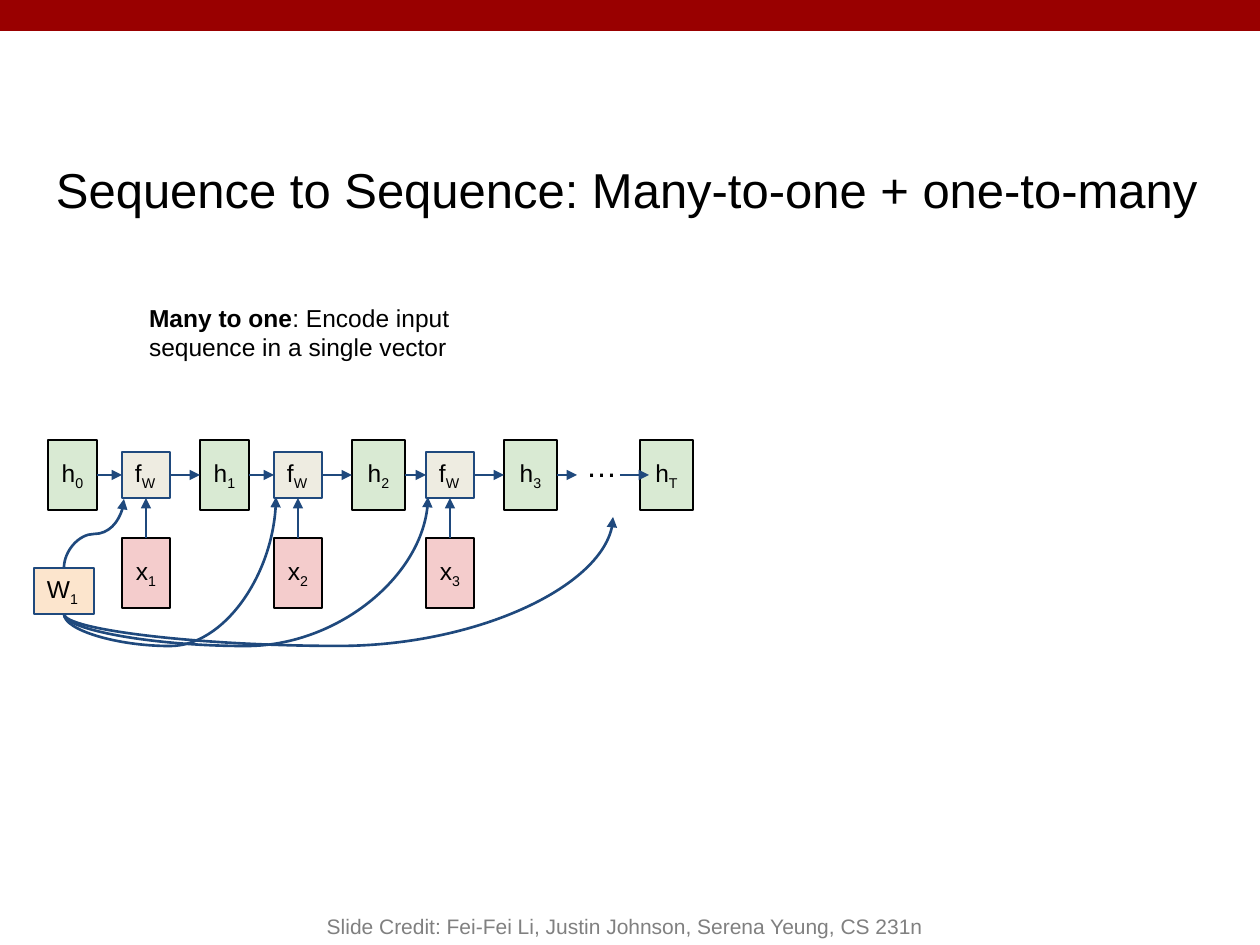
from lxml import etree
from pptx import Presentation, util as u
from pptx.dml.color import RGBColor
from pptx.enum import shapes, text
from pptx.oxml.ns import qn

SCALE = 914400 / 126
FONT = "Arial"
BLACK = RGBColor(0x00, 0x00, 0x00)
GRAY = RGBColor(0x80, 0x80, 0x80)
CRIMSON = RGBColor(0x99, 0x00, 0x00)
NAVY = RGBColor(0x1F, 0x49, 0x7D)
GREEN = RGBColor(0xD9, 0xEA, 0xD3)
BEIGE = RGBColor(0xEE, 0xEC, 0xE1)
PINK = RGBColor(0xF4, 0xCC, 0xCC)
PEACH = RGBColor(0xFC, 0xE5, 0xCD)

TOP, LEFT, BOTTOM, RIGHT = range(4)
STEP = 152
MID_Y = 475
CURVE_Y = 646


def px(value):
    return u.Emu(round(value * SCALE))


def set_frame(box, anchor, inset=13):
    frame = box.text_frame
    frame.word_wrap = True
    frame.vertical_anchor = anchor
    frame.margin_left = frame.margin_right = px(13)
    frame.margin_top = frame.margin_bottom = px(inset)
    return frame


def add_span(para, words, size, color=BLACK, bold=False):
    span = para.add_run()
    span.text = words
    span.font.name = FONT
    span.font.size = u.Pt(size)
    span.font.color.rgb = color
    span.font.bold = bold
    return span


def add_label(page, bounds, spans, size, color=BLACK, anchor=text.MSO_ANCHOR.TOP,
              align=text.PP_ALIGN.LEFT, inset=13):
    box = page.shapes.add_textbox(*map(px, bounds))
    para = set_frame(box, anchor, inset).paragraphs[0]
    para.alignment = align
    for words, bold in spans:
        add_span(para, words, size, color, bold)


def add_block(page, bounds, fill, line=None):
    block = page.shapes.add_shape(shapes.MSO_SHAPE.RECTANGLE, *map(px, bounds))
    block.shadow.inherit = False
    block.fill.solid()
    block.fill.fore_color.rgb = fill
    if line is None:
        block.line.fill.background()
    else:
        block.line.color.rgb = line
        block.line.width = u.Pt(0.75)
    return block


def add_node(page, bounds, fill, line, name, index, align=text.PP_ALIGN.CENTER):
    node = add_block(page, bounds, fill, line)
    para = set_frame(node, text.MSO_ANCHOR.MIDDLE).paragraphs[0]
    para.alignment = align
    add_span(para, name, 14)
    add_span(para, index, 14).font._element.set("baseline", "-25000")
    return node


def add_state(page, left, width, index):
    return add_node(page, (left, MID_Y - 35, width, 70), GREEN, BLACK, "h", index)


def style_arrow(arrow):
    arrow.line.color.rgb = NAVY
    arrow.line.width = u.Pt(1.5)
    etree.SubElement(arrow.line._get_or_add_ln(), qn("a:tailEnd"), type="triangle")
    etree.SubElement(arrow._element.spPr, qn("a:effectLst"))


def add_arrow(page, start, end):
    arrow = page.shapes.add_connector(
        shapes.MSO_CONNECTOR.STRAIGHT, *map(px, (*start, *end)))
    style_arrow(arrow)
    return arrow


def link(page, source, source_side, target, target_side):
    arrow = add_arrow(page, (0, 0), (0, 0))
    arrow.begin_connect(source, source_side)
    arrow.end_connect(target, target_side)


def add_curve(page, start, end, bend_y):
    (x0, y0), (x1, y1) = start, end
    center_x, center_y = (x0 + x1) / 2, (y0 + y1) / 2
    half_width, half_height = (y0 - y1) / 2, (x1 - x0) / 2
    curve = page.shapes.add_connector(
        shapes.MSO_CONNECTOR.CURVE,
        px(center_x + half_width), px(center_y + half_height),
        px(center_x - half_width), px(center_y - half_height))
    properties = curve._element.spPr
    properties.find(qn("a:xfrm")).set("rot", "5400000")
    adjustments = properties.find(qn("a:prstGeom")).get_or_add_avLst()
    bend = round((y0 - bend_y) / (y0 - y1) * 100000)
    etree.SubElement(adjustments, qn("a:gd"), name="adj1", fmla=f"val {bend}")
    style_arrow(curve)


def add_encoder(page):
    state = add_state(page, 48, 49, "0")
    for step, width in enumerate((49, 53, 53)):
        left = 122 + step * STEP
        index = str(step + 1)
        cell = add_node(page, (left, MID_Y - 23, 48, 46), BEIGE, NAVY, "f", "W",
                        text.PP_ALIGN.LEFT)
        value = add_node(page, (left, 538, 48, 70), PINK, BLACK, "x", index)
        following = add_state(page, left + 78, width, index)
        link(page, state, RIGHT, cell, LEFT)
        link(page, value, TOP, cell, BOTTOM)
        link(page, cell, RIGHT, following, LEFT)
        state = following
    add_arrow(page, (557, MID_Y), (577, MID_Y)).begin_connect(state, RIGHT)
    add_label(page, (573, 433, 78, 83), [("…", False)], 18)
    add_state(page, 640, 53, "T")
    add_arrow(page, (620, MID_Y), (649, MID_Y))


def add_weights(page):
    add_node(page, (34, 568, 60, 46), PEACH, NAVY, "W", "1", text.PP_ALIGN.LEFT)
    add_curve(page, (64, 568), (124, 499), 534)
    for end in ((276, 497), (428, 497), (613, 517)):
        add_curve(page, (64, 614), end, CURVE_Y)


def main():
    deck = Presentation()
    deck.slide_width, deck.slide_height = px(1260), px(945)
    page = deck.slides.add_slide(deck.slide_layouts[6])
    add_block(page, (0, 0, 1260, 31), CRIMSON)
    add_label(page, (43, 130, 1186, 118),
              [("Sequence to Sequence: Many-to-one + one-to-many", False)], 28,
              anchor=text.MSO_ANCHOR.MIDDLE)
    add_encoder(page)
    add_weights(page)
    add_label(page, (136, 290, 407, 91),
              [("Many to one", True),
               (": Encode input sequence in a single vector", False)], 14)
    add_label(page, (252, 882, 746, 63),
              [("Slide Credit: Fei-Fei Li, Justin Johnson, Serena Yeung, CS 231n", False)],
              12, GRAY, text.MSO_ANCHOR.BOTTOM, text.PP_ALIGN.CENTER, 6)
    deck.save("out.pptx")


if __name__ == "__main__":
    main()
